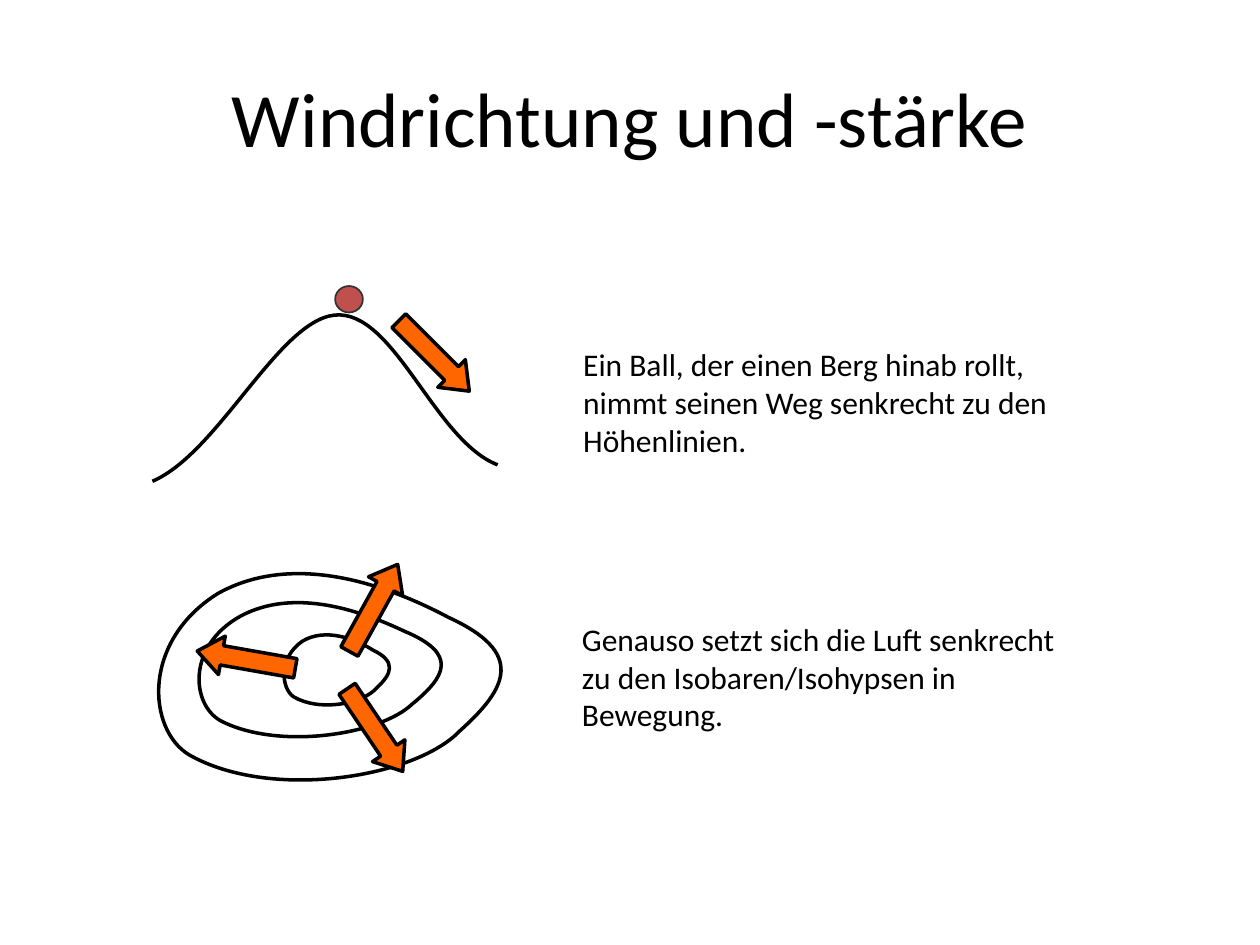
from lxml import etree
from pptx import Presentation
from pptx import util as u
from pptx.dml.color import RGBColor
from pptx.enum import shapes, text
from pptx.oxml.ns import qn

BLACK = RGBColor(0x00, 0x00, 0x00)
GREY = RGBColor(0x33, 0x33, 0x33)
RED = RGBColor(0xC0, 0x50, 0x4D)
ORANGE = RGBColor(0xFF, 0x66, 0x00)

CELL = u.Inches(0.1)  # the grid has 100 columns and 75 rows


class Sketch:
    """Style and current slide; all lengths are in grid cells."""

    font = "Calibri"
    arrow_size = (7.9, 3.1)

    def __init__(self, slide):
        self.shapes = slide.shapes

    def box(self, *cells):
        return [round(c * CELL) for c in cells]

    def paint(self, shape, fill, line, weight):
        shape.shadow.inherit = False
        if fill is None:
            shape.fill.background()
        else:
            shape.fill.solid()
            shape.fill.fore_color.rgb = fill
        shape.line.color.rgb = line
        shape.line.width = u.Pt(weight)

    def label(self, words, left, top, width, height, size, align=text.PP_ALIGN.LEFT):
        frame = self.shapes.add_textbox(*self.box(left, top, width, height)).text_frame
        frame.word_wrap = True
        frame.vertical_anchor = text.MSO_ANCHOR.MIDDLE
        paragraph = frame.paragraphs[0]
        paragraph.alignment = align
        run = paragraph.add_run()
        run.text = words
        run.font.name = self.font
        run.font.size = u.Pt(size)
        run.font.color.rgb = BLACK

    def curve(self, points, closed=False):
        """Start point, then three points for each Bézier segment."""
        start, *rest = [self.box(*point) for point in points]
        builder = self.shapes.build_freeform(*start, scale=1.0)
        builder.add_line_segments(rest, close=closed)
        outline = builder.convert_to_shape()
        self.paint(outline, None, BLACK, 2)
        # Turn each three straight steps into one cubic segment
        steps = list(outline.element.iter(qn("a:lnTo")))[:len(rest)]
        for first in range(0, len(steps), 3):
            cubic = etree.Element(qn("a:cubicBezTo"))
            steps[first].addprevious(cubic)
            for step in steps[first:first + 3]:
                cubic.append(step[0])
                step.getparent().remove(step)

    def ball(self, left, top, width, height):
        ball = self.shapes.add_shape(
            shapes.MSO_SHAPE.OVAL, *self.box(left, top, width, height))
        self.paint(ball, RED, GREY, 1)

    def arrow(self, left, top, angle):
        arrow = self.shapes.add_shape(
            shapes.MSO_SHAPE.RIGHT_ARROW, *self.box(left, top, *self.arrow_size))
        arrow.adjustments[0] = 0.5
        arrow.adjustments[1] = 0.64
        arrow.rotation = angle
        self.paint(arrow, ORANGE, BLACK, 2)


HILL = [(12.1, 38.2), (17.5, 35.9), (22.4, 24.8), (27, 25),
        (31.5, 25.2), (34.6, 35), (39.5, 36.9)]

# Contour lines from the inside out
CONTOURS = [
    [(24, 50.9), (22.1, 52.2), (22.3, 54.6), (23.3, 55.3),
     (25.3, 56.5), (28.8, 55.9), (29.9, 54.6),
     (31.1, 53.5), (31.5, 52.5), (29.6, 51.6),
     (28.2, 50.7), (25.8, 49.8), (24, 50.9)],
    [(19.1, 48.9), (14.8, 51.3), (15.2, 55.9), (17.5, 57.2),
     (22.1, 59.6), (30.2, 58.3), (32.7, 55.9),
     (35.4, 53.7), (36.4, 51.9), (32.1, 50.1),
     (28.7, 48.5), (23.4, 46.6), (19.1, 48.9)],
    [(17.3, 47.1), (11.2, 50.9), (11.7, 57.9), (15, 59.9),
     (21.5, 63.6), (33, 61.7), (36.5, 58),
     (40.3, 54.6), (41.7, 51.8), (35.6, 49),
     (30.9, 46.5), (23.4, 43.7), (17.3, 47.1)],
]

# Left, top and angle of the arrows across the contours
OUTFLOW = [(25.8, 56.4, 56), (25.7, 46.7, 299), (15.6, 50.8, 190)]


def main():
    deck = Presentation()
    deck.slide_width, deck.slide_height = 100 * CELL, 75 * CELL
    sketch = Sketch(deck.slides.add_slide(deck.slide_layouts[6]))

    # Title
    sketch.label("Windrichtung und -stärke", 5, 3, 90, 12.5, 44, text.PP_ALIGN.CENTER)

    # Ball rolling down the hill
    sketch.curve(HILL)
    sketch.ball(26.6, 22.7, 2.2, 2.1)
    sketch.arrow(30.5, 26.7, 45)

    # Air moving across the contours
    for contour in CONTOURS:
        sketch.curve(contour, closed=True)
    for left, top, angle in OUTFLOW:
        sketch.arrow(left, top, angle)

    # Explanations
    sketch.label("Ein Ball, der einen Berg hinab rollt, nimmt seinen Weg "
                 "senkrecht zu den Höhenlinien.", 45.3, 26.9, 43.9, 10, 18)
    sketch.label("Genauso setzt sich die Luft senkrecht zu den "
                 "Isobaren/Isohypsen in Bewegung.", 45.2, 48.7, 40.5, 10, 18)

    deck.save("out.pptx")


if __name__ == "__main__":
    main()
